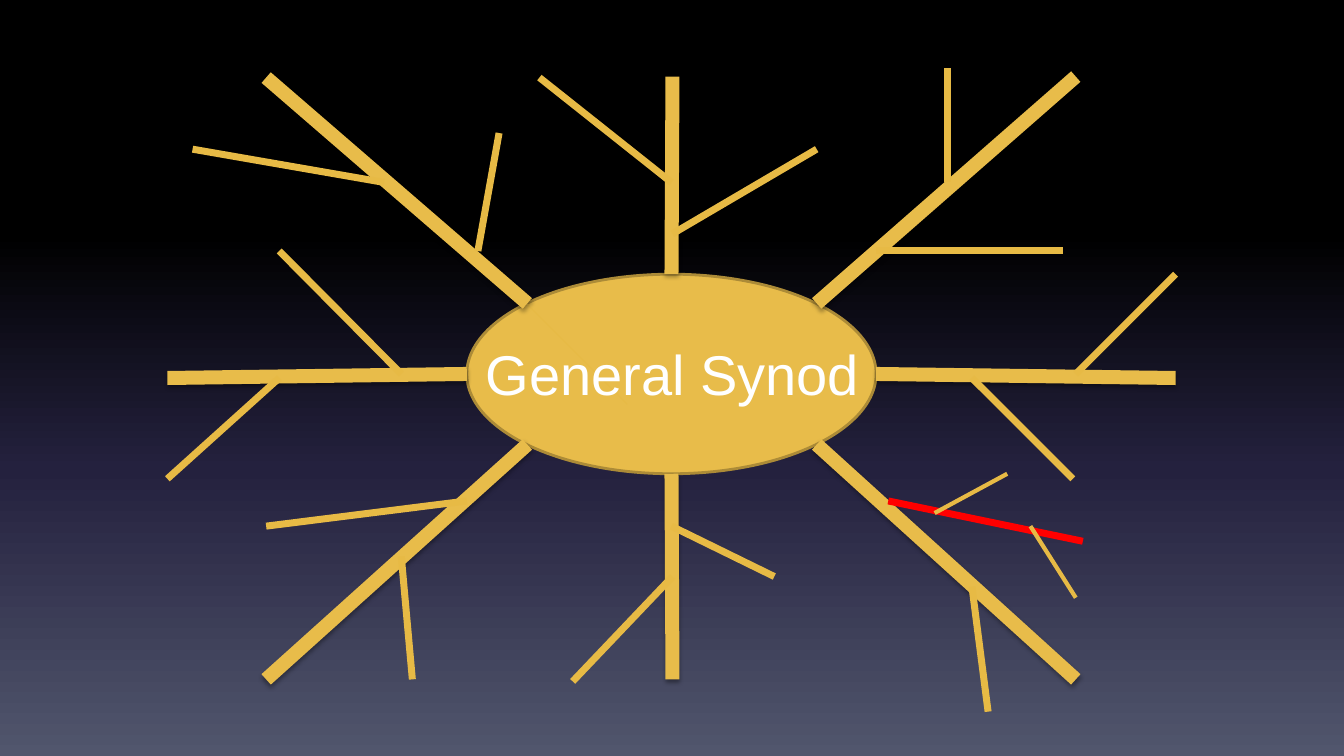
from lxml.etree import SubElement
from pptx import Presentation
from pptx.dml.color import RGBColor
from pptx.enum.shapes import MSO_CONNECTOR, MSO_SHAPE
from pptx.enum.text import MSO_ANCHOR, PP_ALIGN
from pptx.oxml.ns import qn
from pptx.util import Inches, Pt

GOLD, AMBER, BROWN = "E8BC4A", "E7BA45", "AC8B37"
RED, WHITE, BLACK = "FF0000", "FFFFFF", "000000"
SKY = [(0, BLACK), (31, BLACK), (62, "24213E"), (100, "51566D")]

# Each line runs from (x1, y1) to (x2, y2), in inches.
TRUNKS = [
    (2.64, 0.77, 5.23, 3.01), (6.67, 0.76, 6.66, 2.72),
    (10.67, 0.76, 8.1, 3.01), (11.66, 3.75, 8.69, 3.71),
    (10.67, 6.74, 8.1, 4.41), (1.66, 3.75, 4.63, 3.71),
    (2.64, 6.74, 5.23, 4.41), (6.67, 6.74, 6.66, 4.7),
]
BRANCHES = [
    (7.68, 5.72, 6.66, 5.22), (6.67, 5.72, 5.68, 6.76),
    (9.64, 5.82, 9.8, 7.06), (9.64, 3.75, 10.64, 4.75),
    (10.67, 3.71, 11.66, 2.72), (8.69, 2.49, 10.54, 2.49),
    (9.4, 1.81, 9.4, 0.67), (6.67, 2.32, 8.1, 1.48),
    (6.66, 1.81, 5.35, 0.77), (4.74, 2.49, 4.95, 1.32),
    (3.81, 1.81, 1.91, 1.48), (3.98, 3.71, 2.77, 2.49),
    (2.77, 3.75, 1.66, 4.75), (4.63, 4.97, 2.64, 5.22),
    (3.98, 5.52, 4.09, 6.74),
]
RED_BRANCH = (8.81, 4.97, 10.74, 5.37)
TWIGS = [(9.27, 5.09, 9.99, 4.7), (10.22, 5.22, 10.67, 5.93)]
INNER = (5.22, 3.01, 6.22, 4.01)


def rgb(code):
    return RGBColor.from_string(code)


def add_tint(parent, code):
    return SubElement(parent, qn("a:srgbClr"), val=code)


def paint_sky(slide):
    fill = slide.background.fill
    fill.gradient()
    fill.gradient_angle = 270
    stops = next(slide.element.iter(qn("a:gsLst")))
    for stop in list(stops):
        stops.remove(stop)
    for place, code in SKY:
        add_tint(SubElement(stops, qn("a:gs"), pos=str(place * 1000)), code)


def add_line(slide, ends, width, code=AMBER, shadow=False):
    line = slide.shapes.add_connector(
        MSO_CONNECTOR.STRAIGHT, *(Inches(end) for end in ends))
    line.line.width = Pt(width)
    line.line.color.rgb = rgb(code)
    effects = SubElement(line.element.spPr, qn("a:effectLst"))
    if shadow:
        outer = SubElement(
            effects, qn("a:outerShdw"), blurRad=str(Pt(3.1)),
            dist=str(Pt(1.8)), dir="5400000", rotWithShape="0")
        SubElement(add_tint(outer, BLACK), qn("a:alpha"), val="35000")


def add_hub(slide):
    hub = slide.shapes.add_shape(
        MSO_SHAPE.OVAL, Inches(4.63), Inches(2.72), Inches(4.06), Inches(1.98))
    hub.shadow.inherit = False
    hub.fill.solid()
    hub.fill.fore_color.rgb = rgb(GOLD)
    hub.line.color.rgb = rgb(BROWN)
    hub.line.width = Pt(2)


def add_label(slide, text):
    box = slide.shapes.add_textbox(
        Inches(4.64), Inches(3.32), Inches(4.06), Inches(0.77))
    frame = box.text_frame
    frame.word_wrap = True
    frame.vertical_anchor = MSO_ANCHOR.TOP
    para = frame.paragraphs[0]
    para.text = text
    para.alignment = PP_ALIGN.CENTER
    para.font.name = "Arial"
    para.font.size = Pt(40)
    para.font.color.rgb = rgb(WHITE)


def main():
    deck = Presentation()
    deck.slide_width, deck.slide_height = Inches(13.33), Inches(7.5)
    slide = deck.slides.add_slide(deck.slide_layouts[6])
    paint_sky(slide)
    add_hub(slide)
    add_line(slide, INNER, 0.75)
    for ends in TRUNKS:
        add_line(slide, ends, 10, GOLD, shadow=True)
    add_label(slide, "General Synod")
    for ends in BRANCHES:
        add_line(slide, ends, 5)
    add_line(slide, RED_BRANCH, 5, RED)
    for ends in TWIGS:
        add_line(slide, ends, 3)
    deck.save("out.pptx")


if __name__ == "__main__":
    main()
